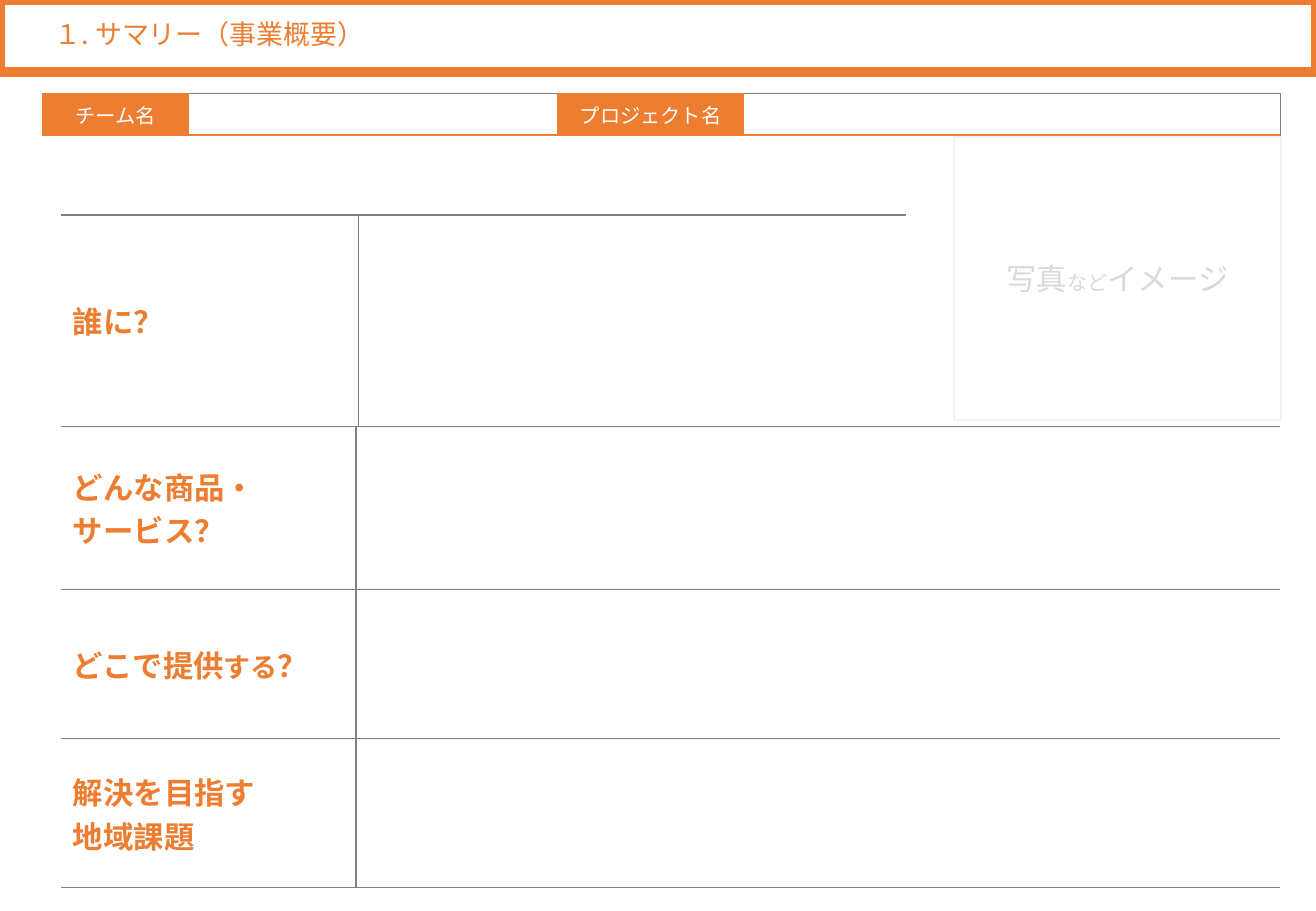
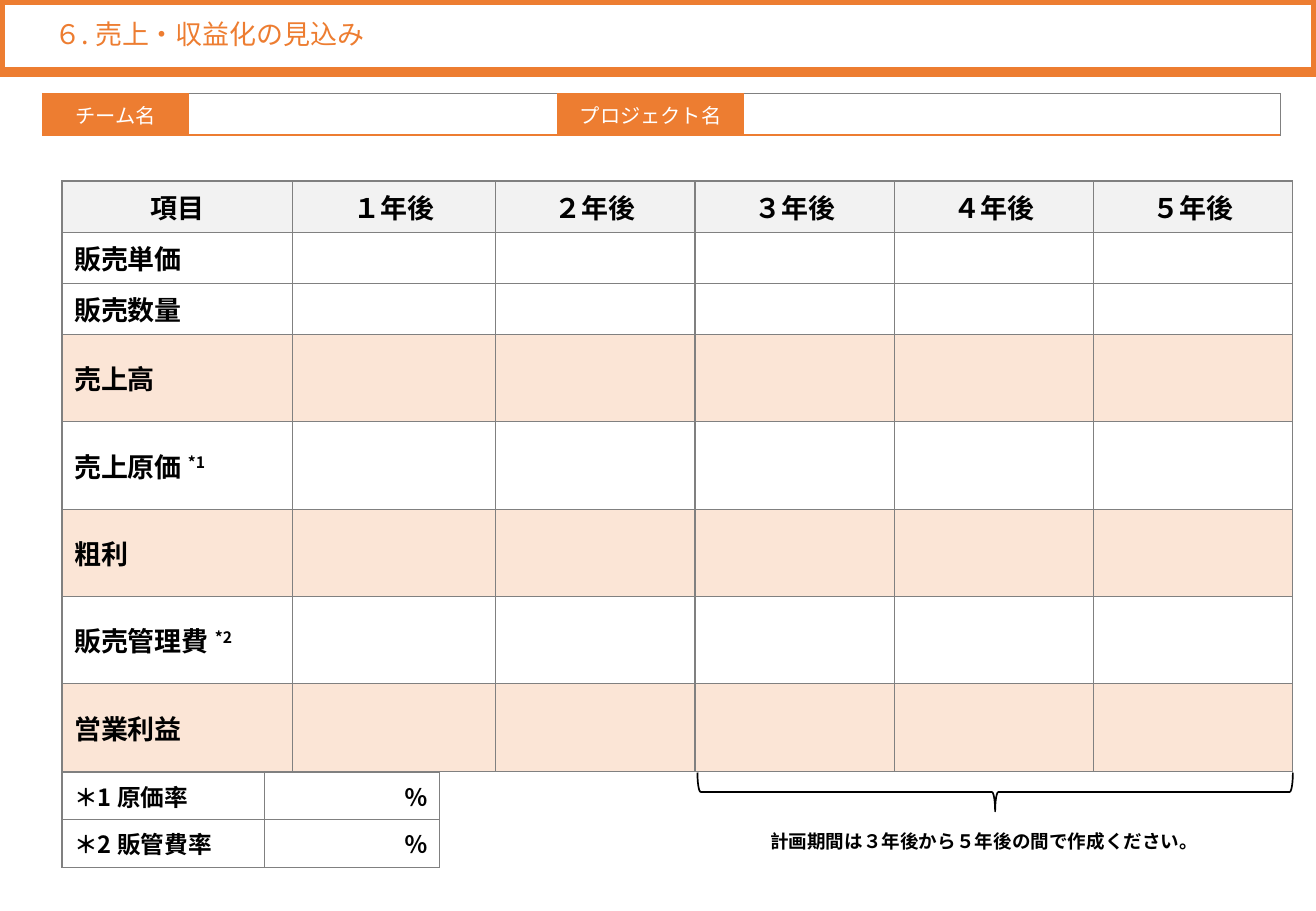
from lxml.etree import SubElement
from pptx import Presentation
from pptx.dml.color import RGBColor
from pptx.enum.shapes import MSO_SHAPE
from pptx.enum.text import MSO_ANCHOR, PP_ALIGN
from pptx.oxml import parse_xml
from pptx.oxml.ns import nsdecls, qn
from pptx.util import Inches, Pt

ORANGE = RGBColor(0xED, 0x7D, 0x31)
PEACH = RGBColor(0xFB, 0xE5, 0xD6)
WHITE = RGBColor(0xFF, 0xFF, 0xFF)
BLACK = RGBColor(0, 0, 0)
GREY = RGBColor(0x80, 0x80, 0x80)
MIST = RGBColor(0xF2, 0xF2, 0xF2)
SILVER = RGBColor(0xD9, 0xD9, 0xD9)
JAPANESE = "Noto Sans CJK JP"
LATIN = "Calibri"
NO_STYLE = "{2D5ABB26-0587-4C30-8999-92F81FD0307C}"
THIN_GREY = (GREY, 0.75)
THIN_ORANGE = (ORANGE, 1)


# Text
def write(para, spans, size, color, bold=False, font=JAPANESE, align=PP_ALIGN.LEFT):
    """Spans are a string, or a list of (text, size, baseline percent)."""
    if isinstance(spans, str):
        spans = [(spans, size, 0)]
    para.alignment = align
    for index, (text, points, baseline) in enumerate(spans):
        if index == 0:
            para.text = text
            runs = para.runs
        else:
            runs = [para.add_run()]
            runs[0].text = text
        for run in runs:
            run.font.size = Pt(points)
            run.font.bold = bold
            run.font.color.rgb = color
            run.font.name = font
            properties = run.font._element
            SubElement(properties, qn("a:ea")).set("typeface", JAPANESE)
            if baseline:
                properties.set("baseline", str(baseline * 1000))


def set_title(slide, text):
    para = slide.shapes.title.text_frame.paragraphs[0]
    write(para, text, 16, ORANGE)
    para.line_spacing = 0.9
    para.space_before = Pt(10)


# Tables
def set_borders(cell, borders):
    """Borders map the sides L, R, T, B to (color, points)."""
    properties = cell._tc.get_or_add_tcPr()
    for index, side in enumerate("LRTB"):
        color, points = borders.get(side, (None, 0))
        fill = (f'<a:solidFill><a:srgbClr val="{color}"/></a:solidFill>'
                if color is not None else "<a:noFill/>")
        properties.insert(index, parse_xml(
            f'<a:ln{side} {nsdecls("a")} w="{Pt(points)}">{fill}</a:ln{side}>'))


def add_plain_table(slide, left, top, columns, rows):
    frame = slide.shapes.add_table(
        len(rows), len(columns), Inches(left), Inches(top),
        Inches(sum(columns)), Inches(sum(rows)))
    table = frame.table
    table.first_row = table.horz_banding = False
    table._tbl.tblPr.find(qn("a:tableStyleId")).text = NO_STYLE
    for column, width in zip(table.columns, columns):
        column.width = Inches(width)
    for row, height in zip(table.rows, rows):
        row.height = Inches(height)
    return frame


def set_cell(cell, spans, size, color, borders, fill=None, **style):
    cell.vertical_anchor = MSO_ANCHOR.MIDDLE
    set_borders(cell, borders)
    if fill is None:
        cell.fill.background()
    else:
        cell.fill.solid()
        cell.fill.fore_color.rgb = fill
    para = cell.text_frame.paragraphs[0]
    if spans:
        write(para, spans, size, color, **style)
    else:
        SubElement(para._p, qn("a:endParaRPr")).set("sz", str(size * 100))


# Shapes
def add_outline(slide, kind, left, top, width, height, color, points):
    shape = slide.shapes.add_shape(
        kind, Inches(left), Inches(top), Inches(width), Inches(height))
    shape.shadow.inherit = False
    shape.fill.background()
    shape.line.color.rgb = color
    shape.line.width = Pt(points)
    return shape


# Shared frame, kept on the layout
def move_to_layout(shape, layout, number):
    element = shape._element
    element.xpath(".//p:cNvPr")[0].set("id", str(number))
    layout.shapes._spTree.append(element)


def share_frame(slide, layout):
    band = add_outline(slide, MSO_SHAPE.RECTANGLE, 0, 0, 10.83, 0.59, ORANGE, 6)
    band.fill.solid()
    band.fill.fore_color.rgb = WHITE

    names = add_plain_table(slide, 0.35, 0.77, [1.2, 3.04, 1.53, 4.42], [0.34])
    label_borders = dict.fromkeys("LRTB", THIN_ORANGE)
    entry_borders = {"L": THIN_ORANGE, "T": THIN_GREY, "B": THIN_ORANGE}
    for column, text in enumerate(["チーム名", "", "プロジェクト名", ""]):
        borders = label_borders if text else dict(entry_borders)
        if not text:
            borders["R"] = THIN_ORANGE if column == 1 else THIN_GREY
        set_cell(names.table.cell(0, column), text, 12, WHITE, borders,
                 fill=ORANGE if text else None, align=PP_ALIGN.CENTER)

    for number, shape in enumerate([band, names], start=101):
        move_to_layout(shape, layout, number)


def place_title(layout):
    title = layout.placeholders[0]
    title.left, title.top = Inches(0.35), Inches(0.11)
    title.width, title.height = Inches(7.95), Inches(0.37)
    title.text_frame.vertical_anchor = MSO_ANCHOR.MIDDLE


# Slide 1: summary
def add_question_table(slide, top, columns, heights, questions, answer_sides):
    table = add_plain_table(slide, 0.5, top, columns, heights).table
    for row, question in enumerate(questions):
        set_cell(table.cell(row, 0), question, 18, ORANGE,
                 dict.fromkeys("RTB", THIN_GREY), bold=True)
        set_cell(table.cell(row, 1), "", 18, ORANGE,
                 dict.fromkeys(answer_sides, THIN_GREY))


def build_summary(slide):
    set_title(slide, "１. サマリー（事業概要）")
    add_question_table(
        slide, 3.51, [2.43, 7.6], [1.34, 1.23, 1.23],
        ["どんな商品・\vサービス？",
         [("どこで提供", 18, 0), ("する", 16, 0), ("？", 18, 0)],
         "解決を目指す\v地域課題"], "LTB")
    add_question_table(slide, 1.77, [2.45, 4.51], [1.74], ["誰に？"], "LT")

    photo = add_outline(slide, MSO_SHAPE.RECTANGLE, 7.85, 1.13, 2.69, 2.33, MIST, 1)
    photo.text_frame.vertical_anchor = MSO_ANCHOR.MIDDLE
    write(photo.text_frame.paragraphs[0],
          [("写真", 18, 0), ("など", 12, 0), ("イメージ", 18, 0)],
          18, SILVER, font=LATIN, align=PP_ALIGN.CENTER)


# Slide 2: sales forecast
def build_forecast(slide):
    set_title(slide, "６. 売上・収益化の見込み")
    grid = dict.fromkeys("LRTB", THIN_GREY)
    headings = ["項目", "１年後", "２年後", "３年後", "４年後", "５年後"]
    items = [
        ("販売単価", None),
        ("販売数量", None),
        ("売上高", PEACH),
        ([("売上原価 ", 16, 0), ("*1", 16, 30)], None),
        ("粗利", PEACH),
        ([("販売管理費 ", 16, 0), ("*2", 16, 30)], None),
        ("営業利益", PEACH),
    ]
    table = add_plain_table(slide, 0.51, 1.49, [1.9, 1.67] + [1.64] * 4,
                            [0.42] * 3 + [0.72] * 5).table
    for column, heading in enumerate(headings):
        set_cell(table.cell(0, column), heading, 16, BLACK, grid, fill=MIST,
                 bold=True, align=PP_ALIGN.CENTER)
        for row, (item, fill) in enumerate(items, start=1):
            set_cell(table.cell(row, column), item if column == 0 else "",
                     16, BLACK, grid, fill=fill, bold=True)

    rates = add_plain_table(slide, 0.51, 6.36, [1.67, 1.44], [0.39] * 2).table
    for row, rate in enumerate(["＊1 原価率", "＊2 販管費率"]):
        set_cell(rates.cell(row, 0), rate, 14, BLACK, grid, bold=True)
        set_cell(rates.cell(row, 1), "％", 14, BLACK, grid, bold=True,
                 align=PP_ALIGN.RIGHT)

    # Planning period
    brace = add_outline(slide, MSO_SHAPE.LEFT_BRACE, 8.03, 4.07, 0.32, 4.9, BLACK, 1)
    brace.rotation = 270
    box = slide.shapes.add_textbox(Inches(6.24), Inches(6.78), Inches(4.1), Inches(0.29))
    box.text_frame.word_wrap = True
    write(box.text_frame.paragraphs[0],
          "計画期間は３年後から５年後の間で作成ください。",
          11, BLACK, bold=True, font=LATIN)


def main():
    deck = Presentation()
    deck.slide_width, deck.slide_height = Inches(10.83), Inches(7.5)
    layout = deck.slide_layouts.get_by_name("Title Only")
    place_title(layout)
    summary, forecast = [deck.slides.add_slide(layout) for _ in range(2)]
    share_frame(summary, layout)
    build_summary(summary)
    build_forecast(forecast)
    deck.save("out.pptx")


if __name__ == "__main__":
    main()
